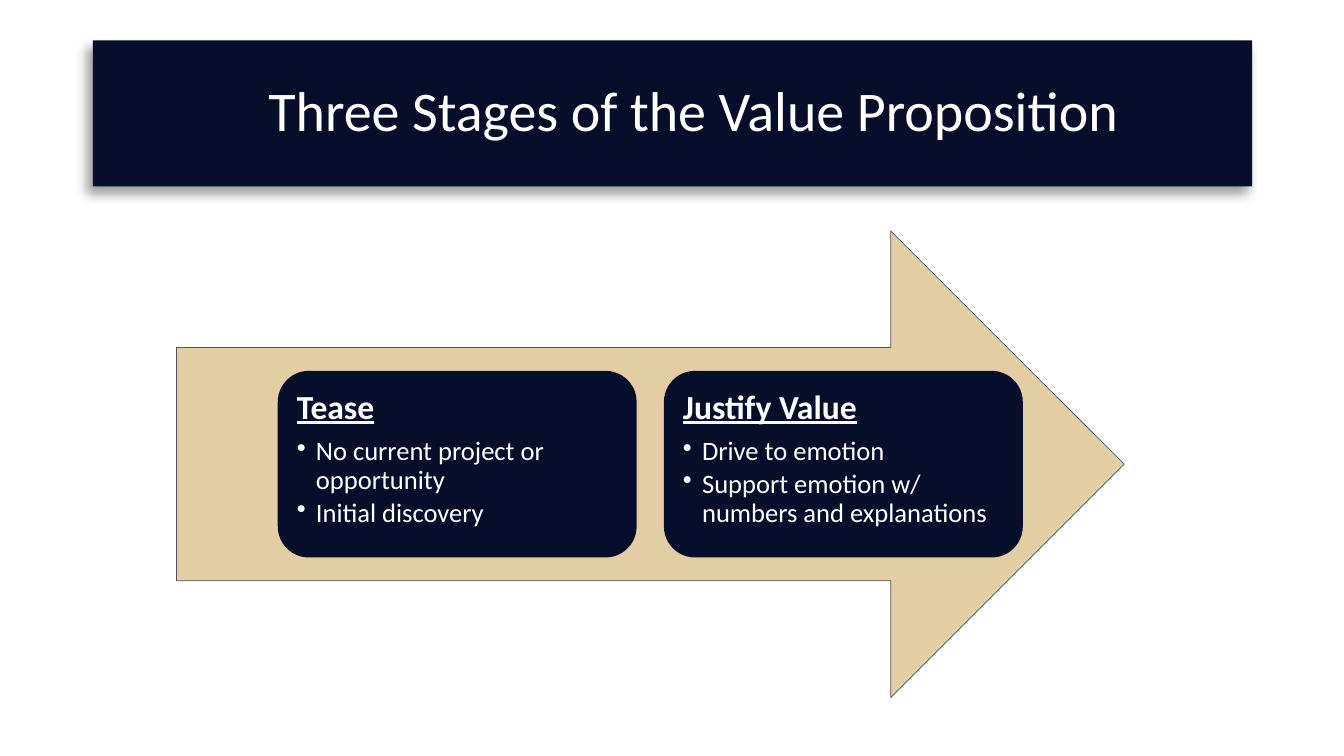
from dataclasses import dataclass

from lxml import etree
from pptx import Presentation
from pptx.dml.color import RGBColor
from pptx.enum.shapes import MSO_SHAPE
from pptx.enum.text import MSO_ANCHOR, MSO_AUTO_SIZE, PP_ALIGN
from pptx.oxml import parse_xml
from pptx.oxml.ns import nsdecls, qn
from pptx.util import Inches, Pt

ARROW, CARD = MSO_SHAPE.RIGHT_ARROW, MSO_SHAPE.ROUNDED_RECTANGLE
LEFT, CENTER = PP_ALIGN.LEFT, PP_ALIGN.CENTER
TOP, MIDDLE = MSO_ANCHOR.TOP, MSO_ANCHOR.MIDDLE
TITLE_ONLY = 5


@dataclass(frozen=True)
class Theme:
    navy: RGBColor = RGBColor.from_string("070E2B")
    sand: RGBColor = RGBColor.from_string("E3CEA3")
    outline: RGBColor = RGBColor.from_string("44546A")
    white: RGBColor = RGBColor.from_string("FFFFFF")
    font: str = "Calibri"
    title: int = 40
    heading: int = 24
    body: int = 19


THEME = Theme()

STAGES = [
    ("Tease", ["No current project or opportunity", "Initial discovery"]),
    ("Justify Value", ["Drive to emotion",
                       "Support emotion w/ numbers and explanations"]),
]


def write(p, text, size, bold=False, underline=False, align=LEFT, after=0):
    """Fill a paragraph with one formatted run."""
    p.alignment = align
    p.line_spacing = 0.9
    p.space_before = Pt(0)
    p.space_after = Pt(after)
    r = p.add_run()
    r.text = text
    r.font.name = THEME.font
    r.font.size = Pt(size)
    r.font.bold = bold
    r.font.underline = underline
    r.font.color.rgb = THEME.white


def add_bullet(p, indent=0.19):
    pPr = p._p.get_or_add_pPr()
    pPr.set("marL", str(Inches(indent)))
    pPr.set("indent", str(-Inches(indent)))
    etree.SubElement(pPr, qn("a:buChar")).set("char", "•")


def add_shadow(sp, blur=8, distance=6, angle=135, opacity=40):
    sp._element.spPr.append(parse_xml(
        f'<a:effectLst {nsdecls("a")}>'
        f'<a:outerShdw blurRad="{Pt(blur)}" dist="{Pt(distance)}" '
        f'dir="{angle * 60000}" algn="tr" rotWithShape="0">'
        f'<a:srgbClr val="000000"><a:alpha val="{opacity * 1000}"/></a:srgbClr>'
        f'</a:outerShdw></a:effectLst>'))


def add_block(slide, kind, x, y, w, h, fill):
    sp = slide.shapes.add_shape(kind, Inches(x), Inches(y), Inches(w), Inches(h))
    sp.shadow.inherit = False
    sp.fill.solid()
    sp.fill.fore_color.rgb = fill
    sp.line.fill.background()
    return sp


def title_banner(slide, x, y, w, h):
    sp = slide.shapes.title
    sp.left, sp.top, sp.width, sp.height = (Inches(v) for v in (x, y, w, h))
    sp.fill.solid()
    sp.fill.fore_color.rgb = THEME.navy
    add_shadow(sp)
    tf = sp.text_frame
    tf.auto_size = MSO_AUTO_SIZE.NONE
    tf.vertical_anchor = MIDDLE
    tf.margin_left = Inches(0.51)  # sets the title right of centre
    write(tf.paragraphs[0], "Three Stages of the Value Proposition",
          THEME.title, align=CENTER)


def stage_card(slide, x, y, w, h, heading, points):
    sp = add_block(slide, CARD, x, y, w, h, THEME.navy)
    tf = sp.text_frame
    tf.word_wrap = True
    tf.vertical_anchor = TOP
    tf.margin_left = tf.margin_right = Inches(0.1)
    tf.margin_top = tf.margin_bottom = Inches(0.1)
    write(tf.paragraphs[0], heading, THEME.heading, bold=True, underline=True,
          after=0.35 * THEME.heading)
    for point in points:
        p = tf.add_paragraph()
        p.level = 1
        write(p, point, THEME.body, after=0.15 * THEME.body)
        add_bullet(p)


def stage_arrow(slide, x, y, w, h):
    arrow = add_block(slide, ARROW, x, y, w, h, THEME.sand)
    arrow.line.color.rgb = THEME.outline
    arrow.line.width = Pt(0.5)

    # Cards, centred on the arrow's shaft
    card_w, card_h, gap = 3.56, 0.4 * h, 0.27
    row_w = len(STAGES) * (card_w + gap) - gap
    left, top = x + (w - row_w) / 2, y + (h - card_h) / 2
    for i, (heading, points) in enumerate(STAGES):
        stage_card(slide, left + i * (card_w + gap), top, card_w, card_h,
                   heading, points)


def main():
    prs = Presentation()
    prs.slide_width, prs.slide_height = Inches(13.33), Inches(7.5)
    slide = prs.slides.add_slide(prs.slide_layouts[TITLE_ONLY])
    title_banner(slide, 0.92, 0.4, 11.5, 1.45)
    stage_arrow(slide, 1.75, 2.29, 9.4, 4.63)
    prs.save("out.pptx")


if __name__ == "__main__":
    main()
